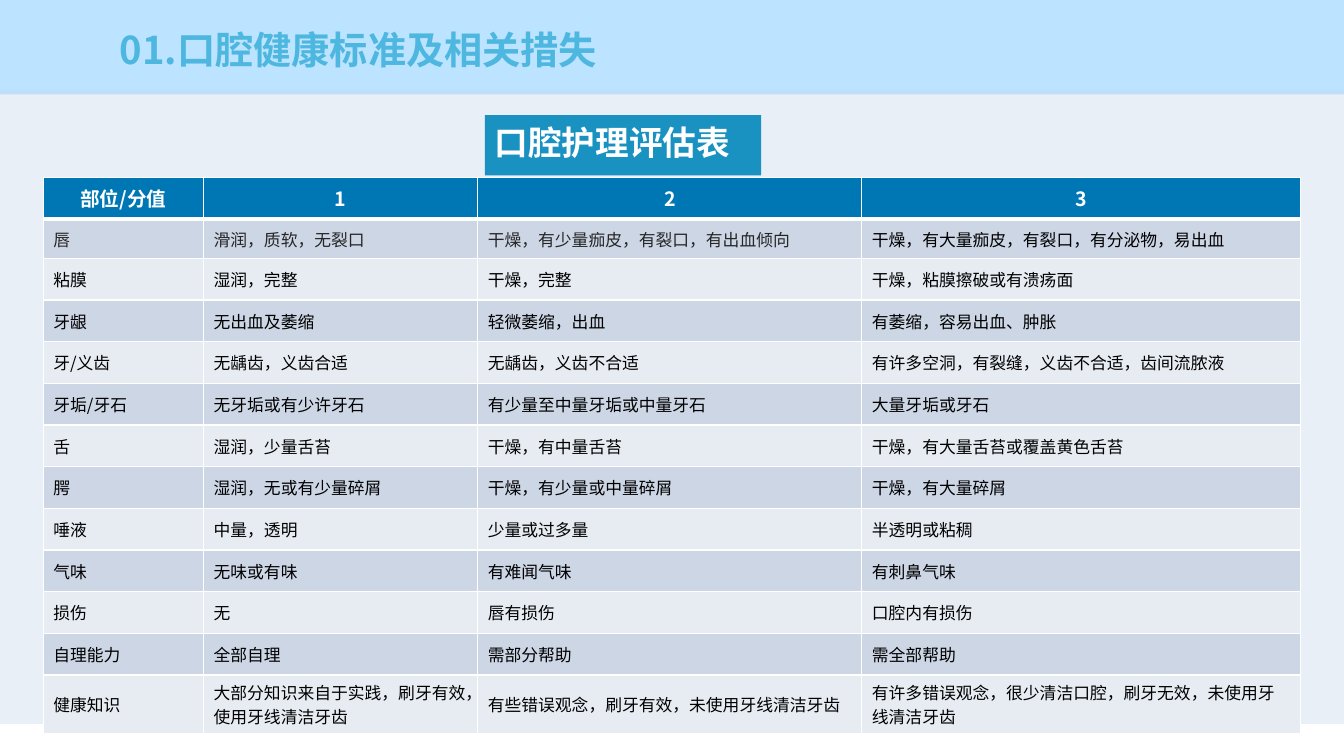
from dataclasses import dataclass

import lxml.etree
import pptx
import pptx.dml.color
import pptx.enum.shapes
import pptx.enum.text
import pptx.oxml.ns
import pptx.util

Cm = pptx.util.Cm
Pt = pptx.util.Pt
ANCHOR = pptx.enum.text.MSO_ANCHOR
ALIGN = pptx.enum.text.PP_ALIGN
AUTO_SIZE = pptx.enum.text.MSO_AUTO_SIZE
qn = pptx.oxml.ns.qn

COLUMN_WIDTHS = (4.04, 6.91, 9.68, 11.05)
ROW_HEIGHT = 1.05
LIP_ROW_HEIGHT = 0.99
ASSESSMENT = [
    ("部位/分值", "1", "2", "3"),
    ("唇", "滑润，质软，无裂口", "干燥，有少量痂皮，有裂口，有出血倾向",
     "干燥，有大量痂皮，有裂口，有分泌物，易出血"),
    ("粘膜", "湿润，完整", "干燥，完整", "干燥，粘膜擦破或有溃疡面"),
    ("牙龈", "无出血及萎缩", "轻微萎缩，出血", "有萎缩，容易出血、肿胀"),
    ("牙/义齿", "无龋齿，义齿合适", "无龋齿，义齿不合适",
     "有许多空洞，有裂缝，义齿不合适，齿间流脓液"),
    ("牙垢/牙石", "无牙垢或有少许牙石", "有少量至中量牙垢或中量牙石", "大量牙垢或牙石"),
    ("舌", "湿润，少量舌苔", "干燥，有中量舌苔", "干燥，有大量舌苔或覆盖黄色舌苔"),
    ("腭", "湿润，无或有少量碎屑", "干燥，有少量或中量碎屑", "干燥，有大量碎屑"),
    ("唾液", "中量，透明", "少量或过多量", "半透明或粘稠"),
    ("气味", "无味或有味", "有难闻气味", "有刺鼻气味"),
    ("损伤", "无", "唇有损伤", "口腔内有损伤"),
    ("自理能力", "全部自理", "需部分帮助", "需全部帮助"),
    ("健康知识", "大部分知识来自于实践，刷牙有效，使用牙线清洁牙齿",
     "有些错误观念，刷牙有效，未使用牙线清洁牙齿",
     "有许多错误观念，很少清洁口腔，刷牙无效，未使用牙线清洁牙齿"),
]


@dataclass(frozen=True)
class Theme:
    font: str = "Noto Sans CJK SC"
    title_size: float = 27.3
    label_size: float = 24
    header_size: float = 14
    body_size: float = 12
    title: str = "4DB7DF"
    white: str = "FFFFFF"
    text: str = "000000"
    soft_text: str = "262626"
    top_band: str = "BCE3FF"
    panel: str = "C6D8EC"
    label: str = "1991C1"
    header: str = "0077B5"
    odd_row: str = "CCD6E5"
    even_row: str = "E7ECF3"


class SlideBuilder:
    def __init__(self, slide, theme):
        self.slide = slide
        self.theme = theme

    def add_run(self, paragraph, text, size, color, bold=False):
        run = paragraph.add_run()
        run.text = text
        run.font.size = Pt(size)
        run.font.bold = bold
        run.font.color.rgb = pptx.dml.color.RGBColor.from_string(color)
        run.font.name = self.theme.font
        east_asian = lxml.etree.SubElement(run.font._element, qn("a:ea"))
        east_asian.set("typeface", self.theme.font)

    def set_fill(self, fill, color, opacity=100):
        fill.solid()
        fill.fore_color.rgb = pptx.dml.color.RGBColor.from_string(color)
        if opacity < 100:
            color_element = fill._xPr.find(".//" + qn("a:srgbClr"))
            alpha = lxml.etree.SubElement(color_element, qn("a:alpha"))
            alpha.set("val", str(opacity * 1000))

    def rectangle(self, left, top, width, height, color, opacity=100):
        shape = self.slide.shapes.add_shape(
            pptx.enum.shapes.MSO_SHAPE.RECTANGLE,
            Cm(left), Cm(top), Cm(width), Cm(height))
        shape.shadow.inherit = False
        self.set_fill(shape.fill, color, opacity)
        shape.line.fill.background()

    def title(self, text, left, top, width, height):
        """Place the title placeholder in front of the shapes drawn so far."""
        title = self.slide.shapes.title
        title.left, title.top = Cm(left), Cm(top)
        title.width, title.height = Cm(width), Cm(height)
        title.element.getparent().append(title.element)
        frame = title.text_frame
        frame.auto_size = AUTO_SIZE.NONE
        frame.vertical_anchor = ANCHOR.MIDDLE
        paragraph = frame.paragraphs[0]
        paragraph.alignment = ALIGN.LEFT
        paragraph.line_spacing = 0.9
        self.add_run(paragraph, text, self.theme.title_size, self.theme.title, True)

    def label(self, text, left, top, width, height):
        box = self.slide.shapes.add_textbox(Cm(left), Cm(top), Cm(width), Cm(height))
        frame = box.text_frame
        frame.word_wrap = False
        frame.auto_size = AUTO_SIZE.SHAPE_TO_FIT_TEXT
        self.add_run(frame.paragraphs[0], text, self.theme.label_size,
                     self.theme.white, True)

    def set_borders(self, cell, row_index):
        properties = cell._tc.get_or_add_tcPr()
        widths = {"L": 1, "R": 1,
                  "T": 3 if row_index == 1 else 1,
                  "B": 3 if row_index == 0 else 1}
        for side, width in widths.items():
            line = lxml.etree.SubElement(properties, qn("a:ln" + side))
            line.set("w", str(Pt(width)))
            fill = lxml.etree.SubElement(line, qn("a:solidFill"))
            color = lxml.etree.SubElement(fill, qn("a:srgbClr"))
            color.set("val", self.theme.white)

    def fill_cell(self, cell, text, row_index, column_index):
        theme = self.theme
        self.set_borders(cell, row_index)
        cell.vertical_anchor = ANCHOR.MIDDLE
        paragraph = cell.text_frame.paragraphs[0]
        if row_index == 0:
            self.set_fill(cell.fill, theme.header)
            paragraph.alignment = ALIGN.CENTER
            self.add_run(paragraph, text, theme.header_size, theme.white, True)
            return
        self.set_fill(cell.fill, theme.odd_row if row_index % 2 else theme.even_row)
        soft = row_index == 1 and column_index < 3
        self.add_run(paragraph, text, theme.body_size,
                     theme.soft_text if soft else theme.text)

    def table(self, rows, left, top, column_widths):
        heights = [ROW_HEIGHT] * len(rows)
        heights[1] = LIP_ROW_HEIGHT
        table = self.slide.shapes.add_table(
            len(rows), len(column_widths), Cm(left), Cm(top),
            Cm(sum(column_widths)), Cm(sum(heights))).table
        table.horz_banding = False
        for column, width in zip(table.columns, column_widths):
            column.width = Cm(width)
        for row_index, texts in enumerate(rows):
            table.rows[row_index].height = Cm(heights[row_index])
            for column_index, text in enumerate(texts):
                self.fill_cell(table.cell(row_index, column_index), text,
                               row_index, column_index)


def main():
    presentation = pptx.Presentation()
    presentation.slide_width = Cm(33.87)
    presentation.slide_height = Cm(19.05)
    slide = presentation.slides.add_slide(presentation.slide_layouts[5])
    theme = Theme()
    builder = SlideBuilder(slide, theme)
    builder.rectangle(0, -0.03, 33.87, 2.41, theme.top_band)
    builder.rectangle(0, 2.26, 33.87, 15.98, theme.panel, opacity=40)
    builder.table(ASSESSMENT, 1.09, 4.47, COLUMN_WIDTHS)
    builder.rectangle(12.22, 2.9, 6.96, 1.52, theme.label)
    builder.label("口腔护理评估表", 12.22, 2.95, 6.53, 1.27)
    builder.title("01.口腔健康标准及相关措失", 2.77, 0.25, 12.8, 2.13)
    presentation.save("out.pptx")


if __name__ == "__main__":
    main()
